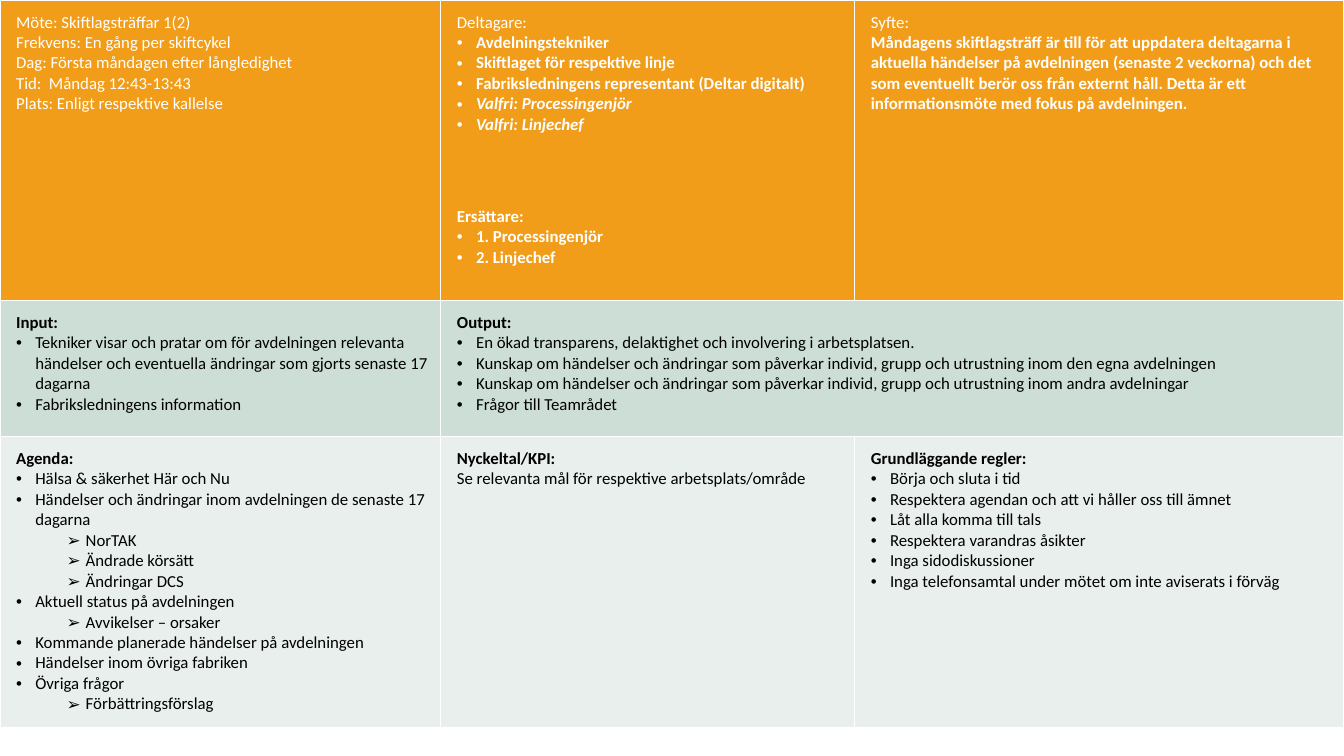
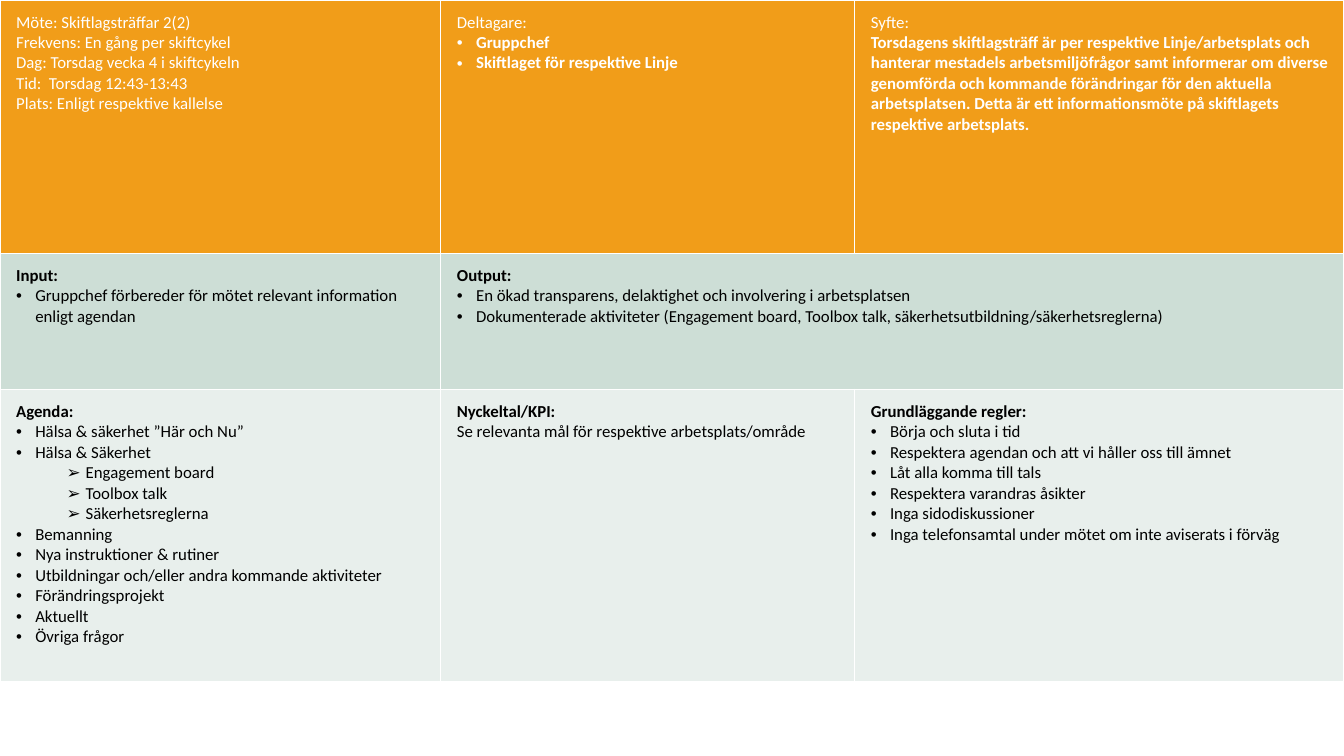
from dataclasses import dataclass
from enum import Enum

from lxml.etree import SubElement
from pptx import Presentation
from pptx.dml.color import RGBColor
from pptx.oxml.ns import qn
from pptx.slide import Slide
from pptx.table import _Cell
from pptx.text.text import _Paragraph
from pptx.util import Emu, Inches, Pt


@dataclass(frozen=True)
class Theme:
    font: str = "Calibri"
    bullet_font: str = "Arial"
    size: Pt = Pt(12)
    rule_width: Pt = Pt(1)
    rule: str = "FFFFFF"
    fills: tuple[str, ...] = ("F19D19", "CDDED6", "E8EFEC")
    inks: tuple[str, ...] = ("FFFFFF", "000000", "000000")
    inset_left: Emu = Inches(0.16)
    inset: Emu = Inches(0.12)


THEME = Theme()
WIDTH, HEIGHT = Inches(13.33), Inches(7.5)
COLUMN_SHARES = (0.328, 0.308, 0.364)  # of the slide's width
LOWER_ROW_SHARES = (0.18, 0.386)  # of the slide's height


class Level(Enum):
    """Bullet character and left indent in inches."""
    PLAIN = ("", 0.0)
    ITEM = ("•", 0.19)
    SUBITEM = ("➢", 0.69)


HANGING = Inches(0.19)


@dataclass(frozen=True)
class Line:
    text: str
    level: Level = Level.PLAIN
    bold: bool = False
    italic: bool = False
    gap_before: float = 0


@dataclass(frozen=True)
class Meeting:
    top_share: float  # height of the top row
    facts: list[Line]
    participants: list[Line]
    purpose: list[Line]
    inputs: list[Line]
    outputs: list[Line]
    agenda: list[Line]


def plain(*texts: str) -> list[Line]:
    return [Line(text) for text in texts]


def heading(text: str) -> list[Line]:
    return [Line(text, bold=True)]


def items(*texts: str, bold: bool = False, italic: bool = False) -> list[Line]:
    return [Line(text, Level.ITEM, bold, italic) for text in texts]


def subitems(*texts: str) -> list[Line]:
    return [Line(text, Level.SUBITEM) for text in texts]


# Content common to both meetings
KPI = heading("Nyckeltal/KPI:") + plain(
    "Se relevanta mål för respektive arbetsplats/område")
RULES = heading("Grundläggande regler:") + items(
    "Börja och sluta i tid",
    "Respektera agendan och att vi håller oss till ämnet",
    "Låt alla komma till tals",
    "Respektera varandras åsikter",
    "Inga sidodiskussioner",
    "Inga telefonsamtal under mötet om inte aviserats i förväg",
)


def meeting_facts(part: str, day: str, time: str) -> list[Line]:
    return plain(
        f"Möte: Skiftlagsträffar {part}",
        "Frekvens: En gång per skiftcykel",
        f"Dag: {day}",
        f"Tid:  {time}",
        "Plats: Enligt respektive kallelse",
    )


MEETINGS = (
    Meeting(
        top_share=0.397,
        facts=meeting_facts("1(2)", "Första måndagen efter långledighet", "Måndag 12:43-13:43"),
        participants=plain("Deltagare:")
        + items("Avdelningstekniker", "Skiftlaget för respektive linje",
                "Fabriksledningens representant (Deltar digitalt)", bold=True)
        + items("Valfri: Processingenjör", "Valfri: Linjechef", bold=True, italic=True)
        + [Line("Ersättare:", bold=True, gap_before=51)]
        + items("1. Processingenjör", "2. Linjechef", bold=True),
        purpose=plain("Syfte:") + heading(
            "Måndagens skiftlagsträff är till för att uppdatera deltagarna i aktuella "
            "händelser på avdelningen (senaste 2 veckorna) och det som eventuellt berör "
            "oss från externt håll. Detta är ett informationsmöte med fokus på avdelningen."),
        inputs=items(
            "Tekniker visar och pratar om för avdelningen relevanta händelser och "
            "eventuella ändringar som gjorts senaste 17 dagarna",
            "Fabriksledningens information"),
        outputs=items(
            "En ökad transparens, delaktighet och involvering i arbetsplatsen.",
            "Kunskap om händelser och ändringar som påverkar individ, grupp och "
            "utrustning inom den egna avdelningen",
            "Kunskap om händelser och ändringar som påverkar individ, grupp och "
            "utrustning inom andra avdelningar",
            "Frågor till Teamrådet"),
        agenda=items("Hälsa & säkerhet Här och Nu",
                     "Händelser och ändringar inom avdelningen de senaste 17 dagarna")
        + subitems("NorTAK", "Ändrade körsätt", "Ändringar DCS")
        + items("Aktuell status på avdelningen")
        + subitems("Avvikelser – orsaker")
        + items("Kommande planerade händelser på avdelningen",
                "Händelser inom övriga fabriken", "Övriga frågor")
        + subitems("Förbättringsförslag"),
    ),
    Meeting(
        top_share=0.335,
        facts=meeting_facts("2(2)", "Torsdag vecka 4 i skiftcykeln", "Torsdag 12:43-13:43"),
        participants=plain("Deltagare:")
        + items("Gruppchef", "Skiftlaget för respektive Linje", bold=True),
        purpose=plain("Syfte:") + heading(
            "Torsdagens skiftlagsträff är per respektive Linje/arbetsplats och hanterar "
            "mestadels arbetsmiljöfrågor samt informerar om diverse genomförda och "
            "kommande förändringar för den aktuella arbetsplatsen. Detta är ett "
            "informationsmöte på skiftlagets respektive arbetsplats."),
        inputs=items("Gruppchef förbereder för mötet relevant information enligt agendan"),
        outputs=items(
            "En ökad transparens, delaktighet och involvering i arbetsplatsen",
            "Dokumenterade aktiviteter (Engagement board, Toolbox talk, "
            "säkerhetsutbildning/säkerhetsreglerna)"),
        agenda=items("Hälsa & säkerhet ”Här och Nu”", "Hälsa & Säkerhet")
        + subitems("Engagement board", "Toolbox talk", "Säkerhetsreglerna")
        + items("Bemanning", "Nya instruktioner & rutiner",
                "Utbildningar och/eller andra kommande aktiviteter",
                "Förändringsprojekt", "Aktuellt", "Övriga frågor"),
    ),
)


def add_bullet(paragraph: _Paragraph, level: Level) -> None:
    character, indent = level.value
    properties = paragraph._p.get_or_add_pPr()
    properties.set("marL", str(Inches(indent)))
    properties.set("indent", str(-HANGING))
    SubElement(properties, qn("a:buFont"), typeface=THEME.bullet_font)
    SubElement(properties, qn("a:buChar"), char=character)


def write_line(paragraph: _Paragraph, line: Line, ink: str) -> None:
    if line.level is not Level.PLAIN:
        add_bullet(paragraph, line.level)
    if line.gap_before:
        paragraph.space_before = Pt(line.gap_before)
    paragraph.add_run().text = line.text
    font = paragraph.font
    font.name, font.size = THEME.font, THEME.size
    font.bold, font.italic = line.bold, line.italic
    font.color.rgb = RGBColor.from_string(ink)


def format_cell(cell: _Cell, fill: str) -> None:
    # Borders come before the fill in the cell's properties
    properties = cell._tc.get_or_add_tcPr()
    for side in "LRTB":
        border = SubElement(properties, qn(f"a:ln{side}"), w=str(THEME.rule_width))
        SubElement(SubElement(border, qn("a:solidFill")), qn("a:srgbClr"), val=THEME.rule)
    cell.fill.solid()
    cell.fill.fore_color.rgb = RGBColor.from_string(fill)
    cell.margin_left = THEME.inset_left
    cell.margin_top = cell.margin_right = cell.margin_bottom = THEME.inset


def write_cell(cell: _Cell, lines: list[Line], ink: str) -> None:
    frame = cell.text_frame
    for index, line in enumerate(lines):
        paragraph = frame.add_paragraph() if index else frame.paragraphs[0]
        write_line(paragraph, line, ink)


def draw_meeting(slide: Slide, meeting: Meeting) -> None:
    row_shares = (meeting.top_share, *LOWER_ROW_SHARES)
    contents = (
        (meeting.facts, meeting.participants, meeting.purpose),
        (heading("Input:") + meeting.inputs, heading("Output:") + meeting.outputs, []),
        (heading("Agenda:") + meeting.agenda, KPI, RULES),
    )
    board = slide.shapes.add_table(
        len(row_shares), len(COLUMN_SHARES), 0, 0, WIDTH, int(HEIGHT * sum(row_shares))).table
    for column, share in zip(board.columns, COLUMN_SHARES):
        column.width = int(WIDTH * share)
    for row, share in zip(board.rows, row_shares):
        row.height = int(HEIGHT * share)
    # Output spans the two right-hand columns
    board.cell(1, 1).merge(board.cell(1, 2))
    for row, cells, fill, ink in zip(board.rows, contents, THEME.fills, THEME.inks):
        for cell, lines in zip(row.cells, cells):
            format_cell(cell, fill)
            write_cell(cell, lines, ink)


def main() -> None:
    deck = Presentation()
    deck.slide_width, deck.slide_height = WIDTH, HEIGHT
    blank = deck.slide_layouts[6]
    for meeting in MEETINGS:
        draw_meeting(deck.slides.add_slide(blank), meeting)
    deck.save("out.pptx")


if __name__ == "__main__":
    main()
